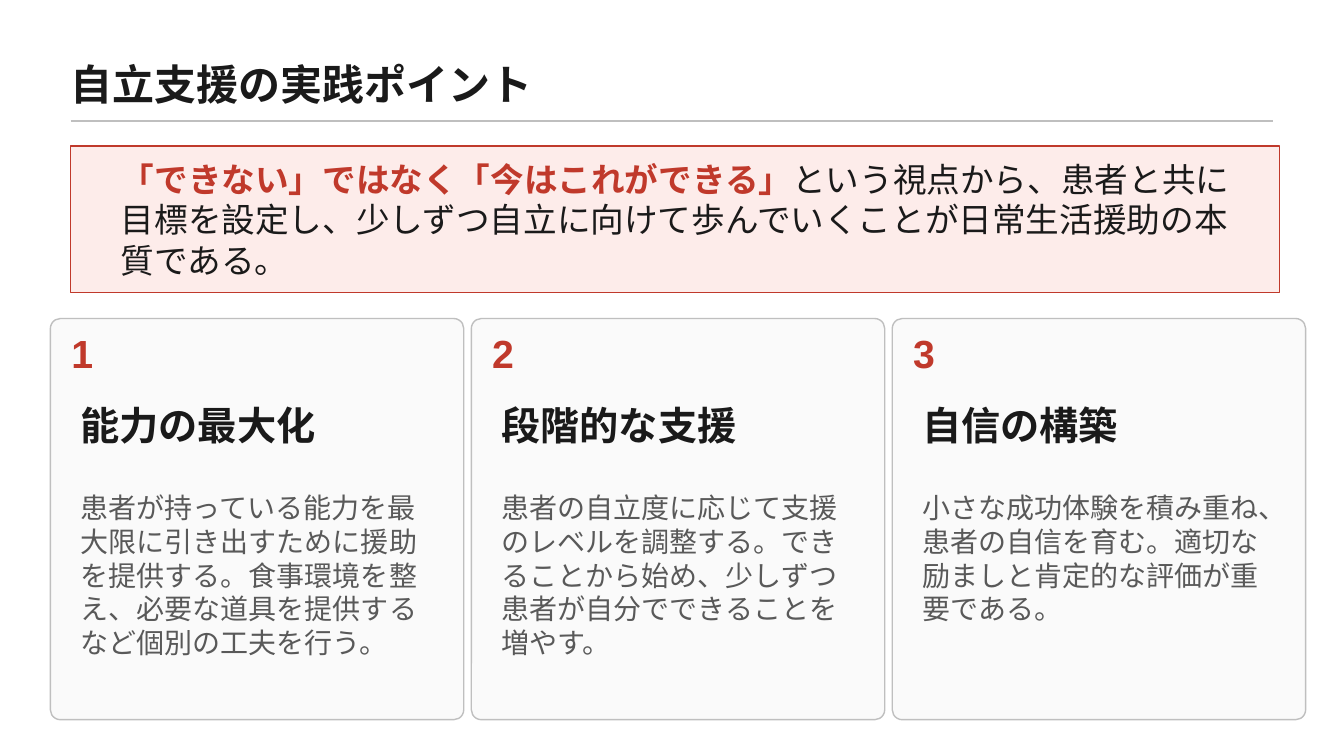
from lxml import etree
from pptx import Presentation
from pptx.dml.color import RGBColor
from pptx.enum.shapes import MSO_CONNECTOR, MSO_SHAPE
from pptx.enum.text import MSO_ANCHOR, MSO_AUTO_SIZE, PP_ALIGN
from pptx.oxml.ns import qn
from pptx.util import Inches, Pt

RECTANGLE = MSO_SHAPE.RECTANGLE
ROUNDED = MSO_SHAPE.ROUNDED_RECTANGLE
STRAIGHT = MSO_CONNECTOR.STRAIGHT
TOP = MSO_ANCHOR.TOP
MIDDLE = MSO_ANCHOR.MIDDLE
NO_AUTOFIT = MSO_AUTO_SIZE.NONE
LEFT = PP_ALIGN.LEFT
CENTER = PP_ALIGN.CENTER

FONT = "Arial"
RED = "C0392B"
DARK = "1A1A1A"
GRAY = "595959"
BORDER = "BFBFBF"
CARD_FILL = "FAFAFA"
MESSAGE_FILL = "FDECEA"

CARD_LEFT = 0.5
CARD_TOP = 3.16
CARD_STEP = 4.175
CARDS = [
    ("能力の最大化", "患者が持っている能力を最大限に引き出すために援助を提供する。食事環境を整え、必要な道具を提供するなど個別の工夫を行う。"),
    ("段階的な支援", "患者の自立度に応じて支援のレベルを調整する。できることから始め、少しずつ患者が自分でできることを増やす。"),
    ("自信の構築", "小さな成功体験を積み重ね、患者の自信を育む。適切な励ましと肯定的な評価が重要である。"),
]


def color(hex_string):
    return RGBColor.from_string(hex_string)


def write(shape, text, size, text_color, bold=False, anchor=MIDDLE, alignment=LEFT):
    frame = shape.text_frame
    frame.word_wrap = True
    frame.auto_size = NO_AUTOFIT
    frame.vertical_anchor = anchor
    paragraph = frame.paragraphs[0]
    paragraph.text = text
    paragraph.alignment = alignment
    paragraph.font.name = FONT
    paragraph.font.size = Pt(size)
    paragraph.font.bold = bold
    paragraph.font.color.rgb = color(text_color)
    return paragraph


presentation = Presentation()
presentation.slide_width = Inches(13.33)
presentation.slide_height = Inches(7.5)
slide = presentation.slides.add_slide(presentation.slide_layouts[5])
shapes = slide.shapes

title = shapes.title
title.left, title.top = Inches(0.7), Inches(0.42)
title.width, title.height = Inches(11.93), Inches(0.82)
title_frame = title.text_frame
title_frame.margin_left = title_frame.margin_right = 0
title_frame.margin_top = title_frame.margin_bottom = 0
write(title, "自立支援の実践ポイント", 30, DARK, bold=True)

rule = shapes.add_connector(STRAIGHT, Inches(0.7), Inches(1.2), Inches(12.63), Inches(1.2))
rule.line.color.rgb = color(BORDER)
rule.line.width = Pt(1)
etree.SubElement(rule._element.spPr, qn("a:effectLst"))

message_panel = shapes.add_shape(RECTANGLE, Inches(0.7), Inches(1.45), Inches(11.99), Inches(1.45))
message_panel.shadow.inherit = False
message_panel.fill.solid()
message_panel.fill.fore_color.rgb = color(MESSAGE_FILL)
message_panel.line.color.rgb = color(RED)
message_panel.line.width = Pt(1)

message = shapes.add_textbox(Inches(1.1), Inches(1.45), Inches(11.39), Inches(1.45))
message_paragraph = write(message, "「できない」ではなく「今はこれができる」", 24, DARK)
emphasis = message_paragraph.runs[0]
emphasis.font.bold = True
emphasis.font.color.rgb = color(RED)
message_paragraph.add_run().text = "という視点から、患者と共に目標を設定し、少しずつ自立に向けて歩んでいくことが日常生活援助の本質である。"

for index, (heading_text, description_text) in enumerate(CARDS):
    left = Inches(CARD_LEFT + index * CARD_STEP)
    text_left = left + Inches(0.2)

    card = shapes.add_shape(ROUNDED, left, Inches(CARD_TOP), Inches(4.1), Inches(3.98))
    card.adjustments[0] = 0.025
    card.shadow.inherit = False
    card.fill.solid()
    card.fill.fore_color.rgb = color(CARD_FILL)
    card.line.color.rgb = color(BORDER)
    card.line.width = Pt(1)

    number = shapes.add_textbox(left, Inches(CARD_TOP), Inches(0.63), Inches(0.68))
    write(number, str(index + 1), 28, RED, bold=True, alignment=CENTER)

    heading = shapes.add_textbox(text_left, Inches(3.81), Inches(3.64), Inches(0.81))
    write(heading, heading_text, 28, DARK, bold=True)

    description = shapes.add_textbox(text_left, Inches(4.82), Inches(3.64), Inches(2.12))
    write(description, description_text, 20, GRAY, anchor=TOP)

presentation.save("out.pptx")
